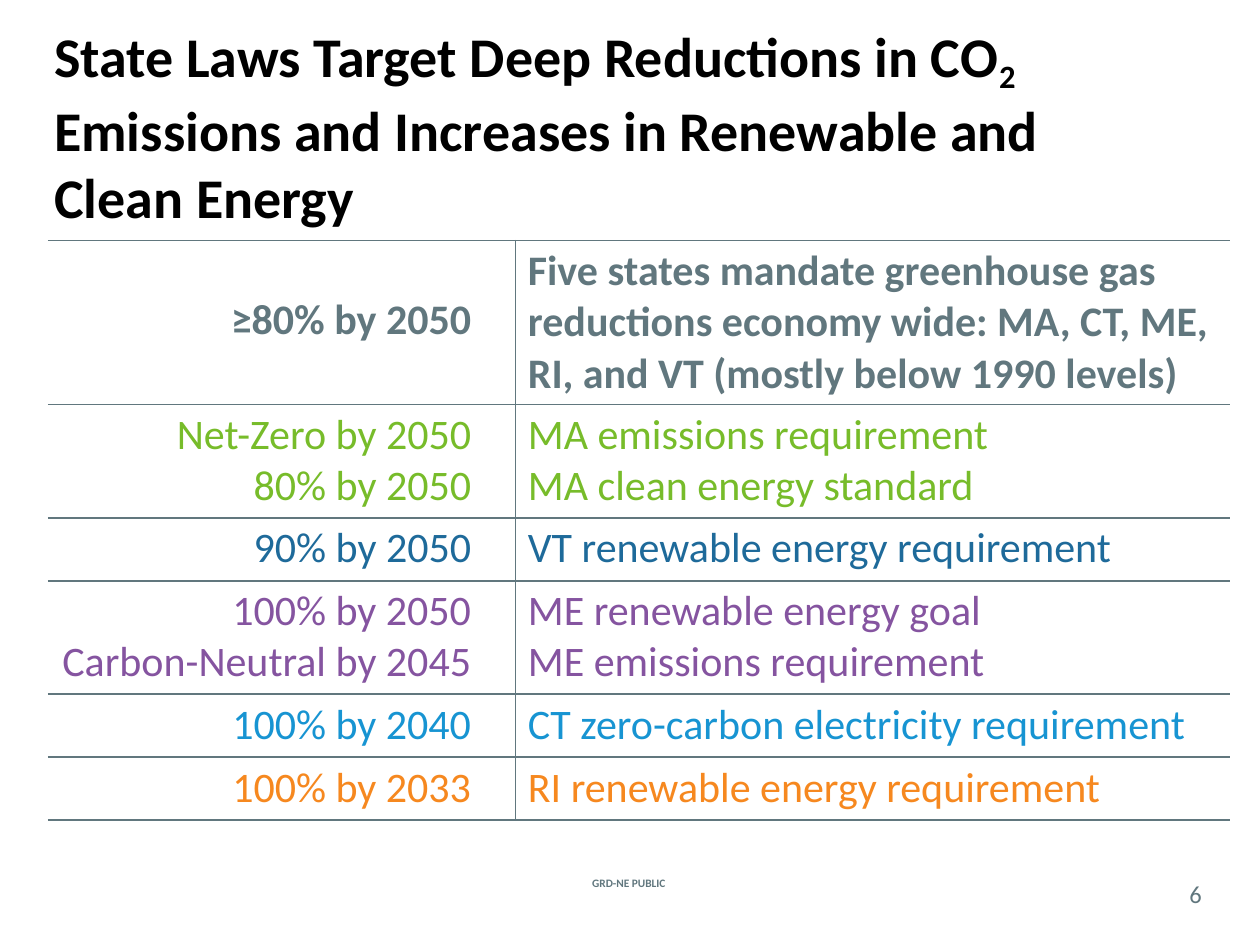
from lxml.etree import SubElement
from pptx import Presentation
from pptx.dml.color import RGBColor
from pptx.enum.text import MSO_ANCHOR, PP_ALIGN
from pptx.oxml.ns import qn
from pptx.util import Inches, Pt

WIDTH, HEIGHT = Inches(10), Inches(7.5)
COLORS = {"black": "000000", "slate": "61777E", "green": "77BC2A", "navy": "1E6A9A",
          "purple": "8554A0", "blue": "1794D2", "orange": "F6881F"}
COLUMNS = (37.1, 56.7)
ROW_HEIGHTS = {1: 6.67, 2: 12, 3: 17.33}
TARGETS = [
    (3, "slate", ["≥80% by 2050"],
     ["Five states mandate greenhouse gas reductions economy wide: MA, CT, ME, "
      "RI, and VT (mostly below 1990 levels)"]),
    (2, "green", ["Net-Zero by 2050", "80% by 2050"],
     ["MA emissions requirement", "MA clean energy standard"]),
    (1, "navy", ["90% by 2050"], ["VT renewable energy requirement"]),
    (2, "purple", ["100% by 2050", "Carbon-Neutral by 2045"],
     ["ME renewable energy goal", "ME emissions requirement"]),
    (1, "blue", ["100% by 2040"], ["CT zero-carbon electricity requirement"]),
    (1, "orange", ["100% by 2033"], ["RI renewable energy requirement"]),
]


def across(percent):
    """Return a share of the slide width."""
    return round(WIDTH * percent / 100)


def down(percent):
    """Return a share of the slide height."""
    return round(HEIGHT * percent / 100)


def apply(target, **values):
    """Set each named attribute on the target."""
    for name, value in values.items():
        setattr(target, name, value)


def add_run(p, text, size, color, bold=False):
    """Add a formatted run to a paragraph."""
    r = p.add_run()
    r.text = text
    apply(r.font, name="Calibri", size=Pt(size), bold=bold)
    r.font.color.rgb = RGBColor.from_string(COLORS[color])
    return r


def add_box(s, x, y, w, h, indent=0.04):
    """Add a wrapping text box and return its first paragraph."""
    tf = s.shapes.add_textbox(across(x), down(y), across(w), down(h)).text_frame
    apply(tf, word_wrap=True, margin_left=Inches(indent), margin_top=0,
          margin_right=0, margin_bottom=0)
    return tf.paragraphs[0]


def add_title(s):
    """Add the heading with its subscript."""
    p = add_box(s, 3.9, 2.3, 79, 23.7)
    for text, baseline in [("State Laws Target Deep Reductions in CO", None), ("2 ", "-20000"),
                           ("Emissions and Increases in Renewable and Clean Energy", None)]:
        r = add_run(p, text, 32, "black", True)
        if baseline:
            r.font._element.set("baseline", baseline)


def add_footer(s):
    """Add the classification label and the slide number."""
    for area, text, size, leading, bold in [
            ((46.9, 92.8, 6.1, 1.6, 0.01), "GRD-NE PUBLIC", 6.5, 7.5, True),
            ((94, 93.47, 3, 2.93), "6", 14, 14.3, False)]:
        p = add_box(s, *area)
        p.line_spacing = Pt(leading)
        add_run(p, text, size, "slate", bold)


def set_borders(cell, sides):
    """Draw the named sides of a cell and clear the others."""
    tc_pr = cell._tc.get_or_add_tcPr()
    for i, side in enumerate("LRTB"):
        ln = SubElement(tc_pr, qn(f"a:ln{side}"), w=str(Pt(1)))
        if side in sides:
            fill = SubElement(ln, qn("a:solidFill"))
            SubElement(fill, qn("a:srgbClr"), val=COLORS["slate"])
        else:
            SubElement(ln, qn("a:noFill"))
        tc_pr.insert(i, ln)


def fill_cell(cell, lines, color, bold, align, margins):
    """Write lines of text into an unfilled cell."""
    cell.fill.background()
    apply(cell, **{f"margin_{side}": Inches(v) for side, v in margins.items()})
    tf = cell.text_frame
    for i, text in enumerate(lines):
        p = tf.add_paragraph() if i else tf.paragraphs[0]
        p.alignment = align
        add_run(p, text, 24, color, bold)


def add_targets(s):
    """Add the table of state targets."""
    tbl = s.shapes.add_table(len(TARGETS), 2, across(3.8), down(25.47), across(sum(COLUMNS)),
                             down(sum(ROW_HEIGHTS[t[0]] for t in TARGETS))).table
    apply(tbl, first_row=False, horz_banding=False)
    for col, width in zip(tbl.columns, COLUMNS):
        col.width = across(width)
    for row, (count, color, goals, laws) in zip(tbl.rows, TARGETS):
        row.height = down(ROW_HEIGHTS[count])
        goal, law = row.cells
        bold = color == "slate"
        fill_cell(goal, goals, color, bold, PP_ALIGN.RIGHT,
                  {"left": 0, "right": 0.35, "top": 0.04, "bottom": 0})
        fill_cell(law, laws, color, bold, PP_ALIGN.LEFT,
                  {"left": 0.1, "right": 0, "top": 0.04, "bottom": 0})
        set_borders(goal, "RTB")
        set_borders(law, "LTB")
    apply(tbl.cell(0, 0), vertical_anchor=MSO_ANCHOR.MIDDLE, margin_top=0,
          margin_bottom=Inches(0.04))


def main():
    """Build and save the slide."""
    prs = Presentation()
    apply(prs, slide_width=WIDTH, slide_height=HEIGHT)
    s = prs.slides.add_slide(prs.slide_layouts[6])
    add_title(s)
    add_targets(s)
    add_footer(s)
    prs.save("out.pptx")


if __name__ == "__main__":
    main()
